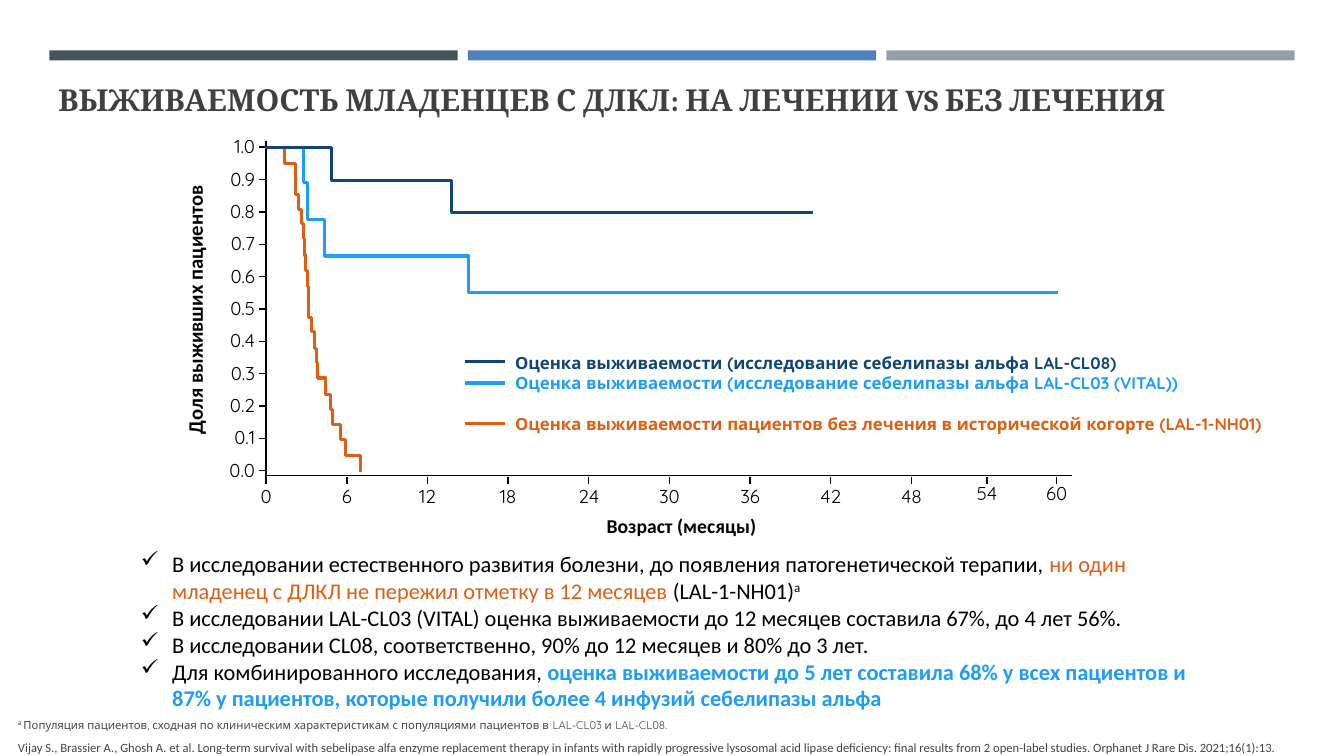
from lxml import etree
from pptx import Presentation
from pptx.dml.color import RGBColor
from pptx.enum.shapes import MSO_CONNECTOR, MSO_SHAPE
from pptx.enum.text import MSO_ANCHOR, PP_ALIGN
from pptx.oxml.ns import qn
from pptx.util import Inches, Pt

RECTANGLE = MSO_SHAPE.RECTANGLE
STRAIGHT = MSO_CONNECTOR.STRAIGHT
LEFT, CENTER, RIGHT = PP_ALIGN.LEFT, PP_ALIGN.CENTER, PP_ALIGN.RIGHT
TOP, BOTTOM = MSO_ANCHOR.TOP, MSO_ANCHOR.BOTTOM

COLORS = {
    "slate": "465359", "steel": "4F81BD", "gray": "969FA7",
    "title": "404040", "black": "000000", "note": "444444",
    "navy": "104575", "blue": "1E9CFA", "orange": "DC5F13",
}

AXIS_X, AXIS_Y = 2.64, 4.72
SCALE_TOP, SCALE_BOTTOM = 1.46, 4.67
MONTH_TICKS = [AXIS_X + 0.8 * index for index in range(9)] + [9.79, 10.48]

CURVES = [
    ("orange", (2.82, 1.47), [
        (2.82, 1.62), (2.93, 1.93), (2.96, 2.08), (2.99, 2.22), (3.01, 2.37),
        (3.02, 2.53), (3.03, 2.68), (3.05, 2.84), (3.06, 3.15), (3.09, 3.29),
        (3.12, 3.46), (3.14, 3.6), (3.15, 3.75), (3.23, 3.91), (3.28, 4.06),
        (3.3, 4.21), (3.38, 4.36), (3.43, 4.52), (3.58, 4.68)]),
    ("blue", (3.01, 1.47), [
        (3.01, 1.81), (3.05, 2.18), (3.22, 2.54), (4.65, 2.9), (9.06, 2.9)]),
    ("navy", (2.63, 1.46), [(3.29, 1.79), (4.48, 2.11), (8.06, 2.11)]),
]

LEGEND = [
    ("navy", 3.59, 0, "Оценка выживаемости (исследование себелипазы альфа LAL-CL08)"),
    ("blue", 3.8, 0, "Оценка выживаемости (исследование себелипазы альфа LAL-CL03 (VITAL))"),
    ("orange", 4.2, 15, "Оценка выживаемости пациентов без лечения в исторической когорте (LAL-1-NH01)"),
]

FINDINGS = [
    [("В исследовании естественного развития болезни, до появления патогенетической терапии, ", {}),
     ("ни один младенец с ДЛКЛ не пережил отметку в 12 месяцев", {"color": "orange"}),
     (" (LAL-1-NH01)", {}), ("а", {"raised": True})],
    [("В исследовании LAL-CL03 (VITAL) оценка выживаемости до 12 месяцев составила 67%, до 4 лет 56%.", {})],
    [("В исследовании CL08, соответственно, 90% до 12 месяцев и 80% до 3 лет.", {})],
    [("Для комбинированного исследования, ", {}),
     ("оценка выживаемости до 5 лет составила 68% у всех пациентов и 87% у пациентов, "
      "которые получили более 4 инфузий себелипазы альфа", {"color": "blue", "bold": True})],
]

FOOTNOTE = ("Популяция пациентов, сходная по клиническим характеристикам с популяциями "
            "пациентов в LAL-CL03 и LAL-CL08.")
REFERENCE = ("Vijay S., Brassier A., Ghosh A. et al. Long-term survival with sebelipase alfa "
             "enzyme replacement therapy in infants with rapidly progressive lysosomal acid "
             "lipase deficiency: final results from 2 open-label studies. "
             "Orphanet J Rare Dis. 2021;16(1):13.")


def rgb(color):
    return RGBColor.from_string(COLORS[color])


def add_bar(slide, left, color):
    shape = slide.shapes.add_shape(RECTANGLE, Inches(left), Inches(0.5), Inches(4.05), Inches(0.1))
    shape.shadow.inherit = False
    shape.fill.solid()
    shape.fill.fore_color.rgb = rgb(color)
    shape.line.fill.background()


def add_line(slide, start, end, color="black", width=1):
    x1, y1, x2, y2 = (Inches(value) for value in start + end)
    connector = slide.shapes.add_connector(STRAIGHT, x1, y1, x2, y2)
    connector.line.color.rgb = rgb(color)
    connector.line.width = Pt(width)
    etree.SubElement(connector.line._get_or_add_ln().getparent(), qn("a:effectLst"))


def add_step_curve(slide, color, start, steps):
    points = []
    level = start[1]
    for x, y in steps:
        points += [(Inches(x), Inches(level)), (Inches(x), Inches(y))]
        level = y
    builder = slide.shapes.build_freeform(Inches(start[0]), Inches(start[1]))
    builder.add_line_segments(points, close=False)
    shape = builder.convert_to_shape()
    shape.shadow.inherit = False
    shape.fill.background()
    shape.line.color.rgb = rgb(color)
    shape.line.width = Pt(2.25)


def add_text_frame(slide, left, top, width, height, anchor=TOP, wrap=True):
    box = slide.shapes.add_textbox(Inches(left), Inches(top), Inches(width), Inches(height))
    box.text_frame.word_wrap = wrap
    box.text_frame.vertical_anchor = anchor
    return box


def add_paragraph(text_frame, index):
    return text_frame.add_paragraph() if index else text_frame.paragraphs[0]


def add_run(paragraph, text, font, size, color="black", bold=False, raised=False):
    run = paragraph.add_run()
    run.text = text
    run.font.name = font
    run.font.size = Pt(size)
    run.font.bold = bold
    run.font.color.rgb = rgb(color)
    if raised:
        run._r.get_or_add_rPr().set("baseline", "30000")


def add_label(slide, text, left, top, width, height, align=CENTER, spacing=10.7,
              font="Quicksand", size=13.3, bold=False, rotation=0):
    box = add_text_frame(slide, left, top, width, height, wrap=False)
    box.rotation = rotation
    frame = box.text_frame
    frame.margin_left = frame.margin_right = frame.margin_top = frame.margin_bottom = 0
    paragraph = frame.paragraphs[0]
    paragraph.alignment = align
    if spacing:
        paragraph.line_spacing = Pt(spacing)
    add_run(paragraph, text, font, size, bold=bold)


def add_axes(slide):
    add_line(slide, (AXIS_X, 1.4), (AXIS_X, 4.76))
    add_line(slide, (AXIS_X, AXIS_Y), (10.63, AXIS_Y))
    for index in range(11):
        y = SCALE_BOTTOM - (SCALE_BOTTOM - SCALE_TOP) * index / 10
        add_line(slide, (2.57, y), (AXIS_X, y))
        add_label(slide, f"{index / 10:.1f}", 2.23, y - 0.12, 0.3, 0.26, RIGHT, spacing=None)
    for index, x in enumerate(MONTH_TICKS):
        add_line(slide, (x, 4.8), (x, 4.73))
        top = 4.88 if index < 9 else 4.85
        add_label(slide, str(index * 6), x - 0.12, top, 0.24, 0.18)
    add_label(slide, "Доля выживших пациентов", 0.75, 2.99, 2.48, 0.17,
              font="Calibri", size=14.7, bold=True, rotation=270)
    add_label(slide, "Возраст (месяцы)", 5.89, 5.18, 1.74, 0.2,
              font="Calibri", size=14, bold=True)


def add_legend(slide):
    frame = add_text_frame(slide, 5.01, 3.45, 8.1, 0.83).text_frame
    for index, (color, y, gap, text) in enumerate(LEGEND):
        add_line(slide, (4.61, y), (5.01, y), color, 2.25)
        paragraph = add_paragraph(frame, index)
        paragraph.space_before = Pt(gap)
        add_run(paragraph, text, "Quicksand", 12, color, bold=True)


def add_findings(slide):
    frame = add_text_frame(slide, 1.3, 5.41, 10.92, 1.72).text_frame
    for index, runs in enumerate(FINDINGS):
        paragraph = add_paragraph(frame, index)
        properties = paragraph._p.get_or_add_pPr()
        properties.set("marL", str(Inches(0.31)))
        properties.set("indent", str(-Inches(0.31)))
        etree.SubElement(properties, qn("a:buChar")).set("char", "✓")
        for text, style in runs:
            add_run(paragraph, text, "Calibri", 16, **style)


def add_notes_line(slide):
    frame = add_text_frame(slide, 0.08, 7.06, 12.92, 0.54).text_frame
    for index, (before, after) in enumerate([(1.6, 3), (1.8, 6)]):
        paragraph = add_paragraph(frame, index)
        paragraph.line_spacing = 1.1
        paragraph.space_before, paragraph.space_after = Pt(before), Pt(after)
    footnote, reference = frame.paragraphs
    add_run(footnote, "а ", "Quicksand", 8, "note", raised=True)
    add_run(footnote, FOOTNOTE, "Quicksand", 8, "note")
    add_run(reference, REFERENCE, "Calibri", 9, "note")


def main():
    presentation = Presentation()
    presentation.slide_width = Inches(13.33)
    presentation.slide_height = Inches(7.5)
    slide = presentation.slides.add_slide(presentation.slide_layouts[6])
    for index, color in enumerate(["slate", "steel", "gray"]):
        add_bar(slide, 0.49 + 4.15 * index, color)
    title = add_text_frame(slide, 0.48, 0.81, 12.06, 0.41, BOTTOM).text_frame.paragraphs[0]
    title.alignment = LEFT
    add_run(title, "ВЫЖИВАЕМОСТЬ МЛАДЕНЦЕВ С ДЛКЛ: НА ЛЕЧЕНИИ VS БЕЗ ЛЕЧЕНИЯ",
            "Cambria", 21.6, "title", bold=True)
    add_axes(slide)
    for curve in CURVES:
        add_step_curve(slide, *curve)
    add_line(slide, (9.06, 2.9), (10.49, 2.9), "blue", 2.25)
    add_legend(slide)
    add_findings(slide)
    add_notes_line(slide)
    presentation.save("out.pptx")


if __name__ == "__main__":
    main()
